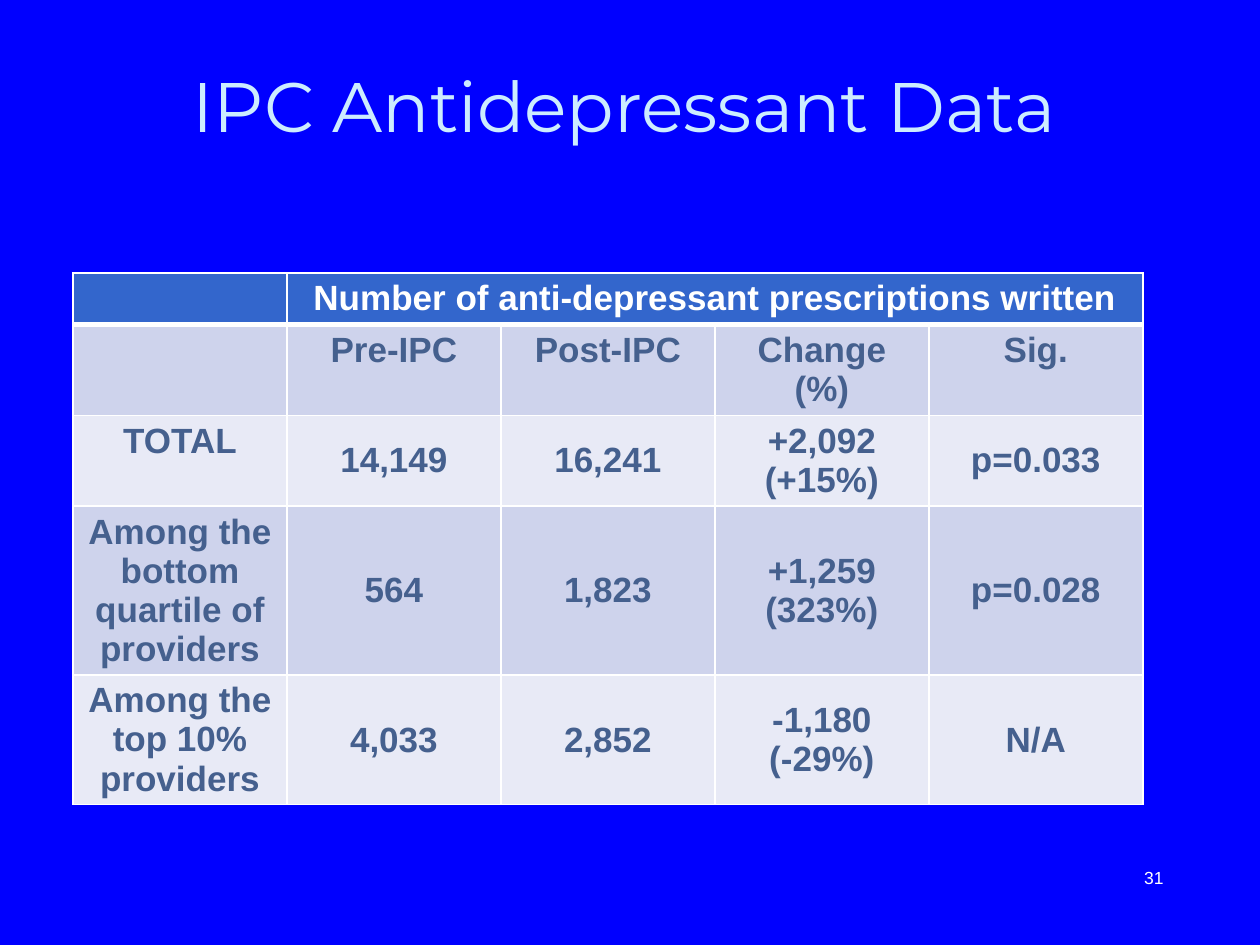
from pptx import Presentation as Deck
from pptx.dml.color import RGBColor as Rgb
from pptx.enum.text import MSO_ANCHOR as Anchor, PP_ALIGN as Align
from pptx.oxml import parse_xml
from pptx.oxml.ns import nsdecls
from pptx.util import Emu, Pt

ROWS = [
    ["", "Number of anti-depressant prescriptions written", "", "", ""],
    ["", "Pre-IPC", "Post-IPC", "Change (%)", "Sig."],
    ["TOTAL", "14,149", "16,241", "+2,092 (+15%)", "p=0.033"],
    ["Among the bottom quartile of providers", "564", "1,823",
     "+1,259 (323%)", "p=0.028"],
    ["Among the top 10% providers", "4,033", "2,852", "-1,180 (-29%)", "N/A"],
]


def px(num):
    return Emu(round(num * 914400 / 126))


def hue(code):
    return Rgb.from_string(code)


class Page:
    white = "FFFFFF"
    head = "3366CC"
    bands = ["E8EAF6", "CED3EC"]
    ink = "45608E"

    def __init__(self, deck, back):
        self.slide = deck.slides.add_slide(deck.slide_layouts[5])
        fill = self.slide.background.fill
        fill.solid()
        fill.fore_color.rgb = hue(back)

    def place(self, shape, x, y, w, h):
        shape.left, shape.top = px(x), px(y)
        shape.width, shape.height = px(w), px(h)

    def words(self, frame, text, size, color, align, face="Arial", bold=False):
        para = frame.paragraphs[0]
        para.text = text
        para.alignment = align
        font = para.font
        font.name, font.size, font.bold = face, Pt(size), bold
        font.color.rgb = hue(color)

    def title(self, text, *box):
        shape = self.slide.shapes.title
        self.place(shape, *box)
        shape.text_frame.vertical_anchor = Anchor.MIDDLE
        self.words(shape.text_frame, text, 40, "CCECFF", Align.CENTER,
                   "Montserrat")

    def label(self, text, *box):
        shape = self.slide.shapes.add_textbox(*map(px, box))
        shape.text_frame.word_wrap = True
        self.words(shape.text_frame, text, 10, self.white, Align.RIGHT)

    def edge(self, cell, side, width):
        cell._tc.get_or_add_tcPr().append(parse_xml(
            f'<a:ln{side} {nsdecls("a")} w="{Pt(width)}"><a:solidFill>'
            f'<a:srgbClr val="{self.white}"/></a:solidFill></a:ln{side}>'))

    def cell(self, cell, text, row, col):
        top = row == 0
        thick = {0: "B", 1: "T"}.get(row)
        for side in "LRTB":
            self.edge(cell, side, 3 if side == thick else 1)
        cell.fill.solid()
        cell.fill.fore_color.rgb = hue(self.head if top else self.bands[row % 2])
        if row > 1 and col:
            cell.vertical_anchor = Anchor.MIDDLE
        self.words(cell.text_frame, text, 20, self.white if top else self.ink,
                   Align.CENTER, bold=True)

    def table(self, rows, x, y, wide, highs):
        count = len(rows[0])
        grid = self.slide.shapes.add_table(
            len(rows), count, px(x), px(y), px(wide * count),
            px(sum(highs))).table
        for col in grid.columns:
            col.width = px(wide)
        for row, high in zip(grid.rows, highs):
            row.height = px(high)
        for r, row in enumerate(rows):
            for c, text in enumerate(row):
                self.cell(grid.cell(r, c), text, r, c)
        grid.cell(0, 1).merge(grid.cell(0, count - 1))


def main():
    deck = Deck()
    deck.slide_width, deck.slide_height = px(1260), px(945)
    page = Page(deck, "0000FF")
    page.title("IPC Antidepressant Data", 73, 15, 1103, 180)
    page.table(ROWS, 73, 273, 214, [50, 50, 90, 167, 128])
    page.label("31", 914, 861, 262, 63)
    deck.save("out.pptx")


if __name__ == "__main__":
    main()
